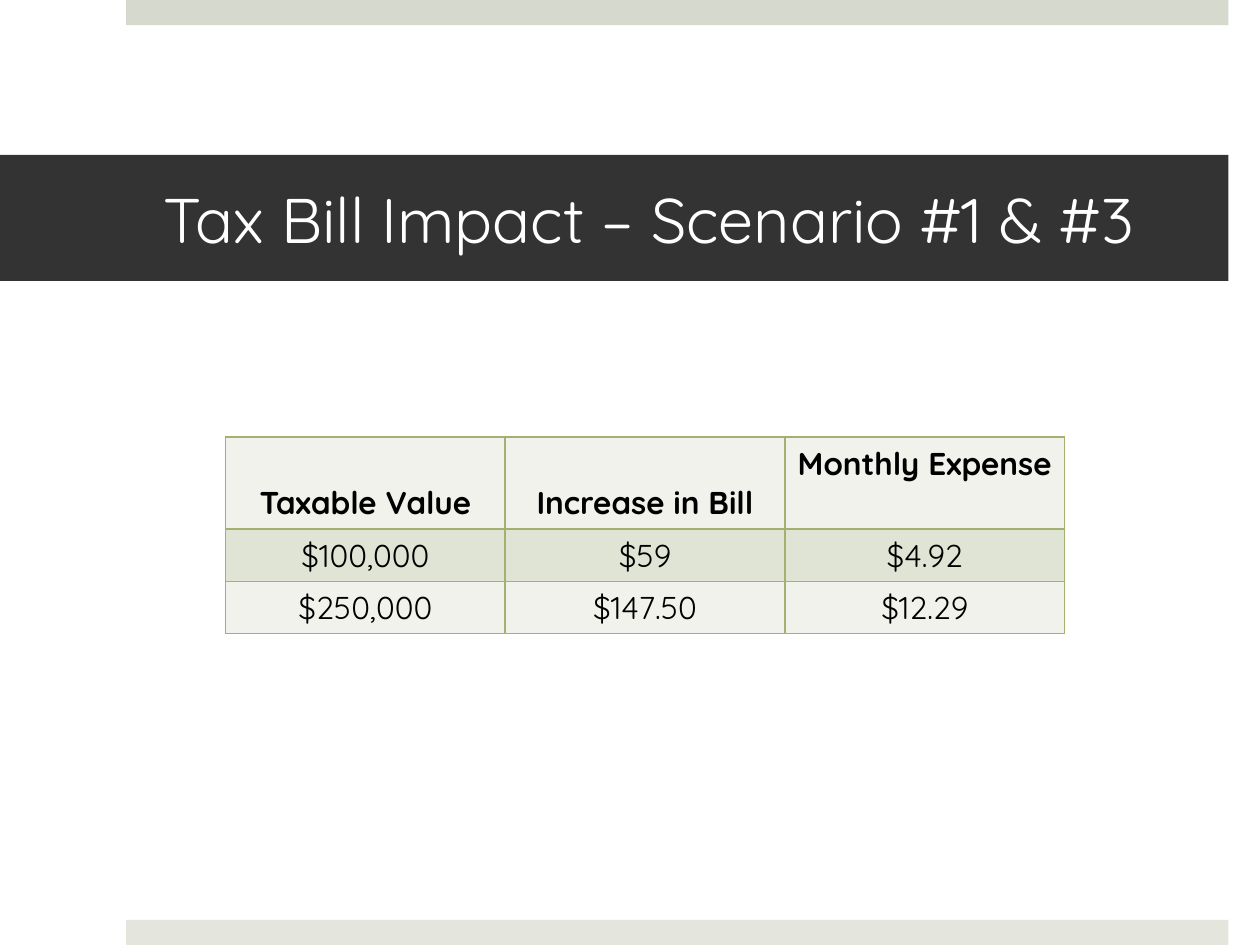
"""Build the tax bill impact slide."""
from lxml.etree import SubElement as Sub
from pptx import Presentation
from pptx.dml.color import RGBColor as Color
from pptx.enum.shapes import MSO_SHAPE as Shape
from pptx.enum.text import MSO_ANCHOR as Anchor, PP_ALIGN as Align
from pptx.oxml.ns import qn
from pptx.util import Inches, Pt

FONT = "Quicksand"
TITLE = "Tax Bill Impact – Scenario #1 & #3"
BARS = [
    (1, 0, 8.75, 0.2, "D6D9CD"),
    (1, 7.3, 8.75, 0.2, "E4E6DE"),
]
BAND = (0, 1.23, 9.75, 1, "333333")
ROWS = [
    ("Taxable Value", "Increase in Bill", "Monthly Expense"),
    ("$100,000", "$59", "$4.92"),
    ("$250,000", "$147.50", "$12.29"),
]
HEADS = [Anchor.BOTTOM, Anchor.BOTTOM, Anchor.TOP]
HIGHS = [0.73, 0.41, 0.41]
FILLS = ["F0F2EB", "E0E4D5"]
EDGE = "A2B170"
LEFT, TOP, WIDE = 1.79, 3.47, 2.22


def paint(fill, tone):
    fill.solid()
    fill.fore_color.rgb = Color.from_string(tone)


def bar(slide, x, y, w, h, tone):
    box = slide.shapes.add_shape(
        Shape.RECTANGLE, Inches(x), Inches(y), Inches(w), Inches(h))
    box.shadow.inherit = False
    box.line.fill.background()
    paint(box.fill, tone)
    return box


def write(frame, text, size, tone, align, bold=False):
    para = frame.paragraphs[0]
    para.alignment = align
    run = para.add_run()
    run.text = text
    font = run.font
    font.name, font.size, font.bold = FONT, Pt(size), bold
    font.color.rgb = Color.from_string(tone)


def border(cell):
    props = cell._tc.get_or_add_tcPr()
    for side in ("lnL", "lnR", "lnT", "lnB"):
        line = Sub(props, qn(f"a:{side}"), w=str(Pt(1)))
        Sub(Sub(line, qn("a:solidFill")), qn("a:srgbClr"), val=EDGE)


def add_title(slide):
    frame = bar(slide, *BAND).text_frame
    frame.word_wrap = True
    frame.vertical_anchor = Anchor.MIDDLE
    frame.margin_left, frame.margin_right = Inches(1.3), Inches(0.3)
    write(frame, TITLE, 36, "FFFFFF", Align.LEFT)


def add_grid(slide):
    cols = len(ROWS[0])
    table = slide.shapes.add_table(
        len(ROWS), cols, Inches(LEFT), Inches(TOP),
        Inches(WIDE * cols), Inches(sum(HIGHS))).table
    for col in table.columns:
        col.width = Inches(WIDE)
    for i, row in enumerate(ROWS):
        table.rows[i].height = Inches(HIGHS[i])
        for j, text in enumerate(row):
            cell = table.cell(i, j)
            border(cell)
            paint(cell.fill, FILLS[i % 2])
            cell.vertical_anchor = HEADS[j] if i == 0 else Anchor.TOP
            write(cell.text_frame, text, 18, "000000", Align.CENTER, i == 0)


def main():
    deck = Presentation()
    deck.slide_width, deck.slide_height = Inches(10), Inches(7.5)
    slide = deck.slides.add_slide(deck.slide_layouts[6])
    paint(slide.background.fill, "FFFFFF")
    for item in BARS:
        bar(slide, *item)
    add_title(slide)
    add_grid(slide)
    deck.save("out.pptx")


if __name__ == "__main__":
    main()
